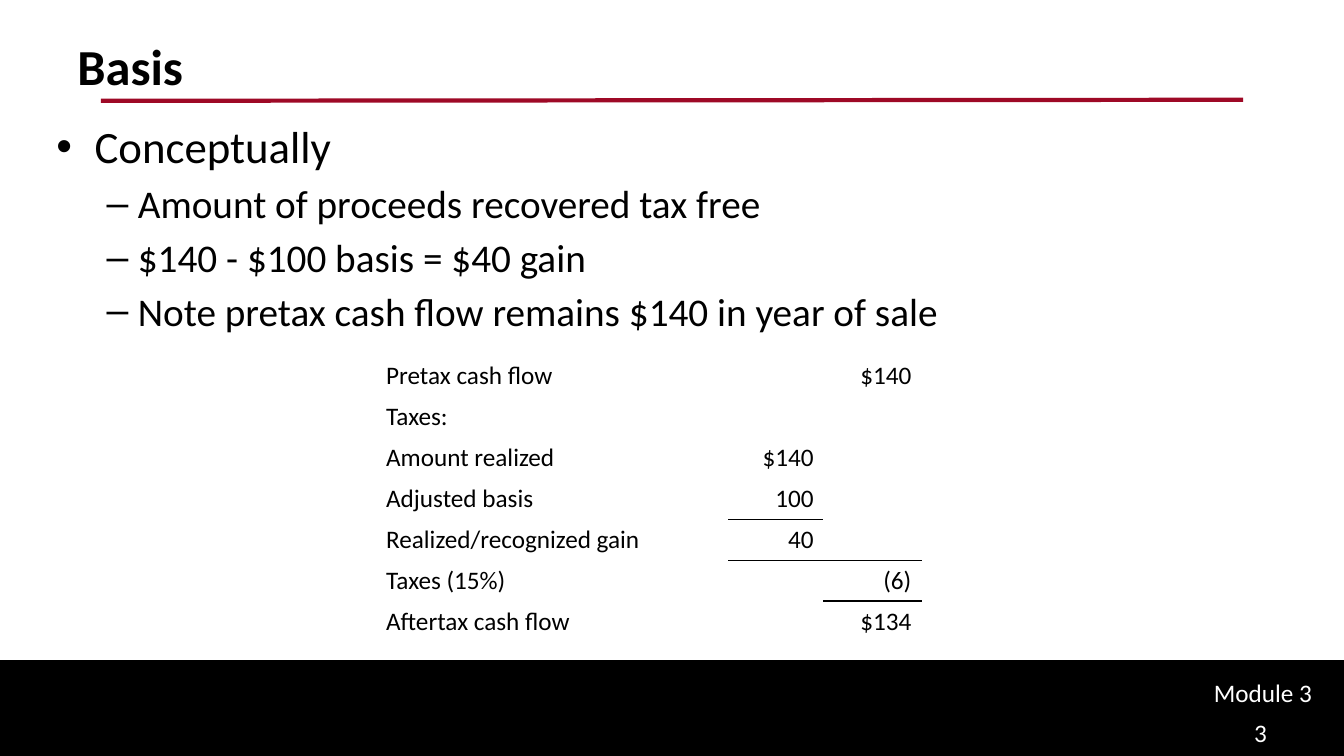
from lxml.etree import SubElement
from pptx import Presentation
from pptx.dml.color import RGBColor
from pptx.enum.shapes import MSO_CONNECTOR, MSO_SHAPE
from pptx.enum.text import PP_ALIGN
from pptx.oxml.ns import qn
from pptx.util import Inches, Pt

FONT = "Calibri"
COLORS = {"black": "000000", "white": "FFFFFF", "rule": "9E0926"}

TITLE = "Basis"
# (level, text)
BULLETS = [
    (0, "Conceptually"),
    (1, "Amount of proceeds recovered tax free"),
    (1, "$140 - $100 basis = $40 gain"),
    (1, "Note pretax cash flow remains $140 in year of sale"),
]
# level: (bullet, left margin, hanging indent, size)
LEVELS = {0: ("•", 0.38, 0.38, 32), 1: ("–", 0.81, 0.31, 28)}
CASH_FLOWS = [
    ("Pretax cash flow", "", "$140"),
    ("Taxes:", "", ""),
    ("Amount realized", "$140", ""),
    ("Adjusted basis", "100", ""),
    ("Realized/recognized gain", "40", ""),
    ("Taxes (15%)", "", "(6)"),
    ("Aftertax cash flow", "", "$134"),
]
COLUMN_WIDTHS = [3.5, 0.94, 0.97]
# cells (row, column) with a line below them
UNDERLINED = {(3, 1), (4, 1), (4, 2), (5, 2)}
# (text, left, top, width, height)
FOOTERS = [
    ("Module 3", 11.94, 6.67, 1.32, 0.4),
    ("3", 12.34, 7.07, 0.91, 0.43),
]


def color(name):
    return RGBColor.from_string(COLORS[name])


def style(paragraph, size, color_name="black", bold=False):
    for run in paragraph.runs:
        run.font.name = FONT
        run.font.size = Pt(size)
        run.font.bold = bold
        run.font.color.rgb = color(color_name)


def add_text_box(slide, left, top, width, height):
    box = slide.shapes.add_textbox(Inches(left), Inches(top), Inches(width), Inches(height))
    box.text_frame.word_wrap = True
    return box.text_frame


def add_border(cell, tag):
    line = SubElement(cell._tc.get_or_add_tcPr(), qn(tag), w=str(Pt(1)))
    fill = SubElement(line, qn("a:solidFill"))
    SubElement(fill, qn("a:srgbClr"), val=COLORS["black"])


def add_bullets(slide):
    text_frame = add_text_box(slide, 0.46, 1.13, 12.21, 4.91)
    text_frame.text = "\n".join(text for level, text in BULLETS)
    for index, (level, text) in enumerate(BULLETS):
        paragraph = text_frame.paragraphs[index]
        bullet, margin, hanging, size = LEVELS[level]
        properties = paragraph._p.get_or_add_pPr()
        properties.set("marL", str(Inches(margin)))
        properties.set("indent", str(-Inches(hanging)))
        SubElement(properties, qn("a:buFont"), typeface="Arial")
        SubElement(properties, qn("a:buChar"), char=bullet)
        paragraph.level = level
        if index:
            paragraph.space_before = Pt(4.8)
        style(paragraph, size)


def add_cash_flow_table(slide):
    table = slide.shapes.add_table(
        len(CASH_FLOWS), len(COLUMN_WIDTHS),
        Inches(3.73), Inches(3.53), Inches(sum(COLUMN_WIDTHS)), Inches(2.84),
    ).table
    table.first_row = table.horz_banding = False
    for column, width in zip(table.columns, COLUMN_WIDTHS):
        column.width = Inches(width)
    for row, values in enumerate(CASH_FLOWS):
        for column, value in enumerate(values):
            cell = table.cell(row, column)
            cell.text = value
            paragraph = cell.text_frame.paragraphs[0]
            if column:
                paragraph.alignment = PP_ALIGN.RIGHT
            style(paragraph, 18)
            # both neighbours of a line carry it
            if (row - 1, column) in UNDERLINED:
                add_border(cell, "a:lnT")
            if (row, column) in UNDERLINED:
                add_border(cell, "a:lnB")
            cell.fill.background()


def main():
    presentation = Presentation()
    presentation.slide_width = Inches(13.33)
    presentation.slide_height = Inches(7.5)
    slide = presentation.slides.add_slide(presentation.slide_layouts[6])

    # Footer band
    band = slide.shapes.add_shape(
        MSO_SHAPE.RECTANGLE, 0, Inches(6.56), Inches(13.33), Inches(0.94))
    band.shadow.inherit = False
    band.fill.solid()
    band.fill.fore_color.rgb = color("black")
    band.line.color.rgb = color("black")
    band.line.width = Pt(2)

    # Rule under the title
    rule = slide.shapes.add_connector(
        MSO_CONNECTOR.STRAIGHT, Inches(1), Inches(1), Inches(12.33), Inches(0.99))
    rule.line.color.rgb = color("rule")
    rule.line.width = Pt(3)
    SubElement(rule._element.spPr, qn("a:effectLst"))

    # Title
    title = add_text_box(slide, 0.67, 0.3, 12, 1.25)
    title.text = TITLE
    style(title.paragraphs[0], 36, bold=True)

    # Body
    add_bullets(slide)
    add_cash_flow_table(slide)

    # Footer texts
    for text, *place in FOOTERS:
        footer = add_text_box(slide, *place)
        footer.text = text
        style(footer.paragraphs[0], 18, "white")

    presentation.save("out.pptx")


if __name__ == "__main__":
    main()
